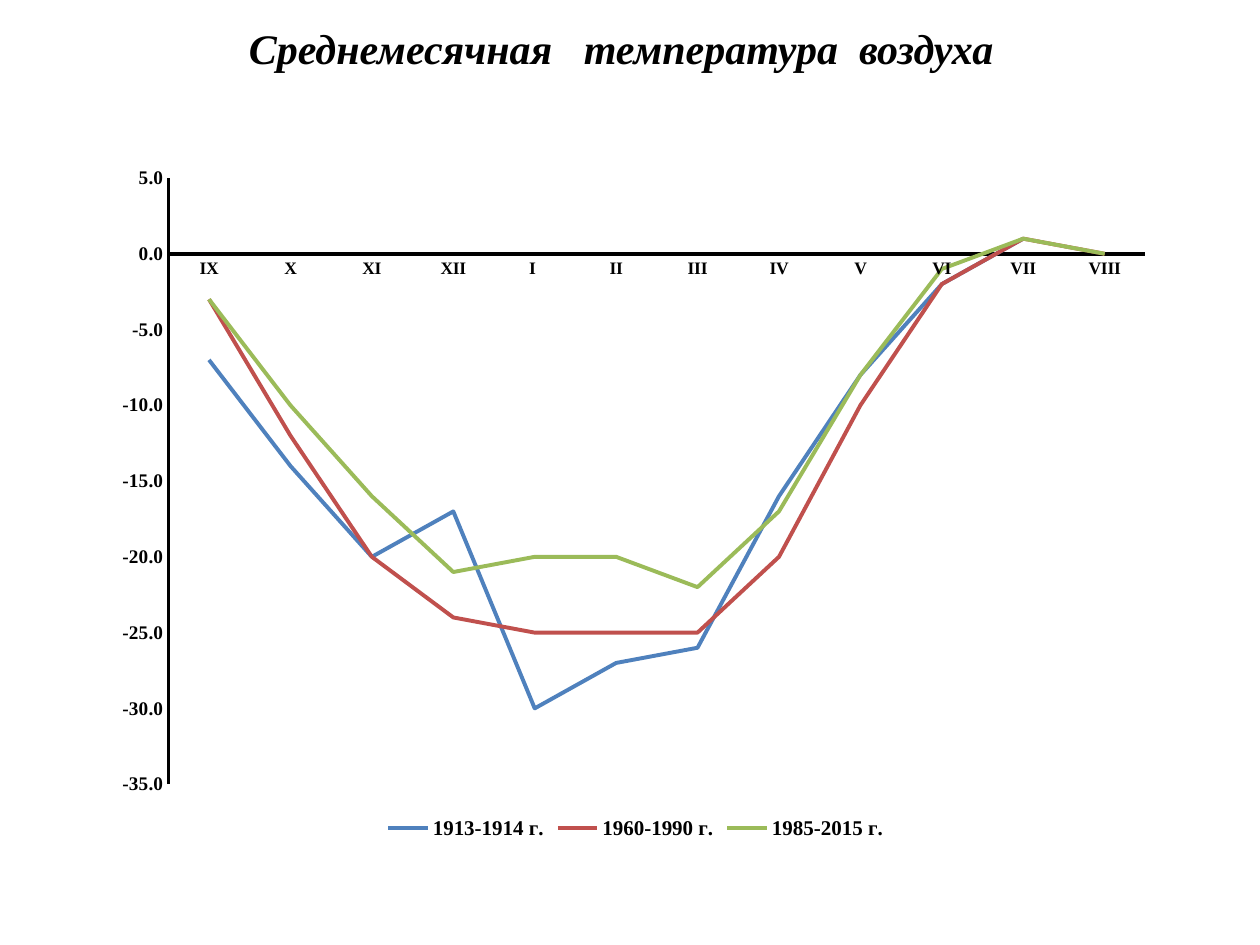
from lxml import etree
from pptx import Presentation
from pptx.chart.data import CategoryChartData
from pptx.dml.color import RGBColor
from pptx.enum.chart import XL_CHART_TYPE, XL_LEGEND_POSITION, XL_TICK_MARK
from pptx.enum.text import MSO_ANCHOR, PP_ALIGN
from pptx.oxml.ns import qn
from pptx.util import Inches, Pt

LINE_CHART = XL_CHART_TYPE.LINE
LEGEND_BOTTOM = XL_LEGEND_POSITION.BOTTOM
NO_TICK = XL_TICK_MARK.NONE
MIDDLE = MSO_ANCHOR.MIDDLE
CENTER = PP_ALIGN.CENTER

TITLE_ONLY_LAYOUT = 5
FONT = "Times New Roman"
COLORS = {
    "text": "000000",
    "1913-1914 г.": "4F81BD",
    "1960-1990 г.": "C0504D",
    "1985-2015 г.": "9BBB59",
}
MONTHS = ["IX", "X", "XI", "XII", "I ", "II", "III", "IV", "V", "VI", "VII", "VIII"]
TEMPERATURES = {
    "1913-1914 г.": [-7, -14, -20, -17, -30, -27, -26, -16, -8, -2, 1, None],
    "1960-1990 г.": [-3, -12, -20, -24, -25, -25, -25, -20, -10, -2, 1, 0],
    "1985-2015 г.": [-3, -10, -16, -21, -20, -20, -22, -17, -8, -1, 1, 0],
}
TITLE_BOX = (0.43, 0, 9, 0.76)
CHART_BOX = (0.83, 0.76, 8.43, 5.94)
PLOT_AREA = {"x": 0.06, "y": 0.11, "w": 0.92, "h": 0.81}


def set_attributes(target, values):
    """Set each named attribute of the target."""
    for name, value in values.items():
        setattr(target, name, value)


def format_font(font, size, **extra):
    """Apply the bold black slide font at the given point size."""
    set_attributes(font, {"name": FONT, "size": Pt(size), "bold": True, **extra})
    font.color.rgb = RGBColor.from_string(COLORS["text"])


def format_line(line, color, width):
    """Give a line its solid colour and point width."""
    line.color.rgb = RGBColor.from_string(COLORS[color])
    line.width = Pt(width)


def place_title(slide, box):
    """Move the title placeholder into the box and fill it."""
    title = slide.shapes.title
    left, top, width, height = map(Inches, box)
    set_attributes(title, {"left": left, "top": top, "width": width, "height": height})
    title.text_frame.vertical_anchor = MIDDLE
    paragraph = title.text_frame.paragraphs[0]
    paragraph.alignment = CENTER
    run = paragraph.add_run()
    run.text = "Среднемесячная   температура  воздуха"
    format_font(run.font, 24, italic=True)


def set_plot_layout(chart, fractions):
    """Fix the inner plot area at fractions of the chart box."""
    plot_area = chart.element.find(qn("c:chart")).find(qn("c:plotArea"))
    for old_layout in plot_area.findall(qn("c:layout")):
        plot_area.remove(old_layout)
    layout = etree.Element(qn("c:layout"))
    manual = etree.SubElement(layout, qn("c:manualLayout"))
    settings = {"layoutTarget": "inner", "xMode": "edge", "yMode": "edge", **fractions}
    for name, value in settings.items():
        etree.SubElement(manual, qn(f"c:{name}")).set("val", str(value))
    plot_area.insert(0, layout)


def format_axis(axis, size):
    """Style an axis with a black line, bold labels and no ticks or grid."""
    set_attributes(axis, {
        "major_tick_mark": NO_TICK,
        "minor_tick_mark": NO_TICK,
        "has_major_gridlines": False,
    })
    format_font(axis.tick_labels.font, size)
    format_line(axis.format.line, "text", 2)


def place_chart(slide, box):
    """Draw the monthly temperature line chart in the box."""
    data = CategoryChartData(number_format="0.0")
    data.categories = MONTHS
    for name, values in TEMPERATURES.items():
        data.add_series(name, values)
    chart = slide.shapes.add_chart(LINE_CHART, *map(Inches, box), data).chart
    set_attributes(chart, {"has_title": False, "has_legend": True})
    set_attributes(chart.font, {"name": "Calibri", "size": Pt(10)})
    set_attributes(chart.legend, {"position": LEGEND_BOTTOM, "include_in_layout": False})
    format_font(chart.legend.font, 12)
    format_axis(chart.category_axis, 10)
    format_axis(chart.value_axis, 11)
    set_attributes(chart.value_axis, {"minimum_scale": -35, "maximum_scale": 5, "major_unit": 5})
    set_attributes(chart.value_axis.tick_labels,
                   {"number_format": "0.0", "number_format_is_linked": False})
    chart.plots[0].vary_by_categories = False
    for series in chart.plots[0].series:
        series.smooth = False
        format_line(series.format.line, series.name, 2.25)
    set_plot_layout(chart, PLOT_AREA)


def main():
    """Build and save the presentation."""
    presentation = Presentation()
    set_attributes(presentation, {"slide_width": Inches(10), "slide_height": Inches(7.5)})
    slide = presentation.slides.add_slide(presentation.slide_layouts[TITLE_ONLY_LAYOUT])
    place_title(slide, TITLE_BOX)
    place_chart(slide, CHART_BOX)
    presentation.save("out.pptx")


if __name__ == "__main__":
    main()
